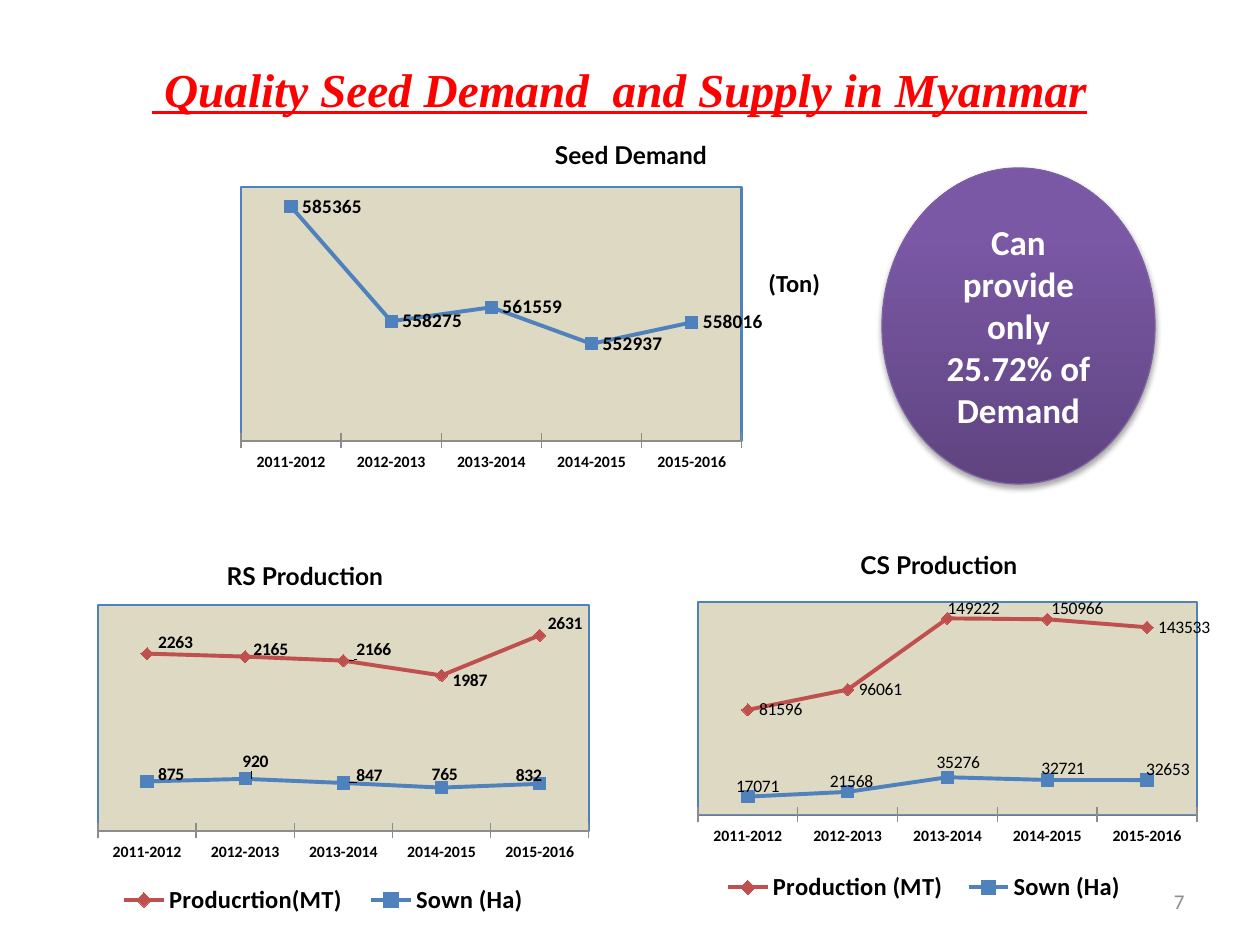
from dataclasses import dataclass

from pptx import Presentation
from pptx.chart.data import CategoryChartData
from pptx.dml.color import RGBColor
from pptx.enum.chart import XL_CHART_TYPE, XL_LABEL_POSITION, XL_LEGEND_POSITION, XL_MARKER_STYLE, XL_TICK_MARK
from pptx.enum.shapes import MSO_SHAPE
from pptx.enum.text import MSO_ANCHOR, PP_ALIGN
from pptx.oxml import parse_xml
from pptx.util import Emu, Pt

LEFT, CENTER, RIGHT = PP_ALIGN.LEFT, PP_ALIGN.CENTER, PP_ALIGN.RIGHT
TOP, MIDDLE, BOTTOM = MSO_ANCHOR.TOP, MSO_ANCHOR.MIDDLE, MSO_ANCHOR.BOTTOM
LINE, STACKED = XL_CHART_TYPE.LINE_MARKERS, XL_CHART_TYPE.LINE_MARKERS_STACKED
MARKERS = (XL_MARKER_STYLE.SQUARE, XL_MARKER_STYLE.DIAMOND)
LABEL_RIGHT = XL_LABEL_POSITION.RIGHT
LEGEND_RIGHT = XL_LEGEND_POSITION.RIGHT
TICK_CROSS = XL_TICK_MARK.CROSS
OVAL = MSO_SHAPE.OVAL
EMU_PER_PX = 914400 / 126
CHART_NS = 'xmlns:c="http://schemas.openxmlformats.org/drawingml/2006/chart"'
DRAWING_NS = 'xmlns:a="http://schemas.openxmlformats.org/drawingml/2006/main"'
YEARS = [f"{year}-{year + 1}" for year in range(2011, 2016)]


@dataclass(frozen=True)
class Theme:
    """Colours, fonts and type sizes of the slide."""
    red: str = "FF0000"
    black: str = "000000"
    white: str = "FFFFFF"
    grey: str = "8C8C8C"
    plot: str = "DDD9C3"
    series: tuple = ("4F81BD", "C0504D")
    oval_stops: tuple = ((0, "5F4480"), (80, "7B58A6"), (100, "7C57A8"))
    oval_line: str = "7D60A0"
    body_font: str = "Calibri"
    title_font: str = "Times New Roman"
    caption_font: str = "Lato"
    title: int = 27
    callout: int = 20
    heading: int = 14
    number: int = 12
    strong_label: int = 11
    label: int = 10
    axis: int = 9


def px(length):
    """Turn pixels into EMU."""
    return Emu(round(length * EMU_PER_PX))


def box(left, top, width, height):
    """Turn a pixel rectangle into EMU."""
    return [px(length) for length in (left, top, width, height)]


def set_font(font, size, color, name, bold=False):
    """Set the given font's look."""
    font.size, font.name, font.bold = Pt(size), name, bold
    font.color.rgb = RGBColor.from_string(color)


def set_layout(element, index, values, chart_size, target=""):
    """Place a chart part by a pixel rectangle or a pixel offset."""
    for old in element.xpath("./c:layout"):
        element.remove(old)
    parts = [f'<c:layoutTarget val="{target}"/>'] if target else []
    if len(values) == 4:
        parts += ['<c:xMode val="edge"/>', '<c:yMode val="edge"/>']
    for key, value, whole in zip("xywh", values, chart_size * 2):
        parts.append(f'<c:{key} val="{value / whole:.4f}"/>')
    element.insert(index, parse_xml(
        f'<c:layout {CHART_NS}><c:manualLayout>{"".join(parts)}</c:manualLayout></c:layout>'))


class SlideBuilder:
    """Adds styled elements to one slide."""

    def __init__(self, slide, theme):
        self.slide, self.theme = slide, theme

    def add_run(self, frame, text, size, color, font_name, align=LEFT, anchor=TOP, bold=True):
        """Add one styled run to the frame's paragraph and return it."""
        frame.word_wrap, frame.vertical_anchor = True, anchor
        paragraph = frame.paragraphs[0]
        paragraph.alignment = align
        run = paragraph.add_run()
        run.text = text
        set_font(run.font, size, color, font_name, bold)
        return run

    def title(self, text, rectangle):
        """Fill the title placeholder."""
        shape = self.slide.shapes.title
        shape.left, shape.top, shape.width, shape.height = box(*rectangle)
        run = self.add_run(shape.text_frame, text, self.theme.title, self.theme.red,
                           self.theme.title_font, CENTER, MIDDLE)
        run.font.italic = run.font.underline = True

    def text(self, text, rectangle, size, color, **style):
        """Add a text box."""
        shape = self.slide.shapes.add_textbox(*box(*rectangle))
        self.add_run(shape.text_frame, text, size, color, self.theme.body_font, **style)

    def caption(self, text, rectangle):
        """Add a one-cell table as a chart heading."""
        table = self.slide.shapes.add_table(1, 1, *box(*rectangle)).table
        table.first_row = table.horz_banding = False
        cell = table.cell(0, 0)
        cell.fill.background()
        cell.margin_left = cell.margin_right = cell.margin_top = cell.margin_bottom = 0
        cell.vertical_anchor = BOTTOM
        paragraph = cell.text_frame.paragraphs[0]
        paragraph.alignment = CENTER
        run = paragraph.add_run()
        run.text = text
        set_font(run.font, self.theme.heading, self.theme.black, self.theme.caption_font, True)

    def callout(self, text, rectangle):
        """Add the shaded oval."""
        shape = self.slide.shapes.add_shape(OVAL, *box(*rectangle))
        stops = "".join(f'<a:gs pos="{position * 1000}"><a:srgbClr val="{color}"/></a:gs>'
                        for position, color in self.theme.oval_stops)
        properties = shape._element.spPr
        properties.insert(2, parse_xml(
            f'<a:gradFill {DRAWING_NS}><a:gsLst>{stops}</a:gsLst>'
            '<a:lin ang="16200000" scaled="0"/></a:gradFill>'))
        shape.line.color.rgb = RGBColor.from_string(self.theme.oval_line)
        shape.line.width = Pt(0.75)
        shape.shadow.inherit = False
        properties.xpath("./a:effectLst")[0].append(parse_xml(
            f'<a:outerShdw {DRAWING_NS} blurRad="40000" dist="23000" dir="5400000" rotWithShape="0">'
            f'<a:srgbClr val="{self.theme.black}"><a:alpha val="35000"/></a:srgbClr></a:outerShdw>'))
        self.add_run(shape.text_frame, text, self.theme.callout, self.theme.white,
                     self.theme.body_font, CENTER, MIDDLE)

    def chart(self, kind, rectangle, plot, scale, series, legend=None, bold=False,
              label_size=None, offsets=()):
        """Add a line chart; scale holds minimum, maximum and major unit."""
        theme, size = self.theme, rectangle[2:]
        data = CategoryChartData(number_format="0")
        data.categories = YEARS
        for name, values in series.items():
            data.add_series(name, values)
        chart = self.slide.shapes.add_chart(kind, *box(*rectangle), data).chart
        set_font(chart.font, theme.label, theme.black, theme.body_font, bold)
        chart.has_title = False
        chart.has_legend = legend is not None
        if legend:
            chart.legend.position = LEGEND_RIGHT
            chart.legend.include_in_layout = False
            set_font(chart.legend.font, theme.heading, theme.black, theme.body_font, True)
            set_layout(chart.legend._element, 1, legend, size)
        axis = chart.category_axis
        axis.major_tick_mark = TICK_CROSS
        axis.format.line.color.rgb = RGBColor.from_string(theme.grey)
        set_font(axis.tick_labels.font, theme.axis, theme.black, theme.body_font, True)
        axis = chart.value_axis
        axis.visible = axis.has_major_gridlines = False
        axis.minimum_scale, axis.maximum_scale, axis.major_unit = scale
        area = chart._chartSpace.xpath(".//c:plotArea")[0]
        set_layout(area, 0, plot, size, "inner")
        area.append(parse_xml(
            f'<c:spPr {CHART_NS} {DRAWING_NS}><a:solidFill><a:srgbClr val="{theme.plot}"/></a:solidFill>'
            f'<a:ln w="19050"><a:solidFill><a:srgbClr val="{theme.series[0]}"/></a:solidFill></a:ln></c:spPr>'))
        chart.plots[0].vary_by_categories = False
        for index, line in enumerate(chart.plots[0].series):
            color = RGBColor.from_string(theme.series[index])
            line.smooth = False
            line.format.line.color.rgb = color
            line.format.line.width = Pt(2.25)
            line.marker.style, line.marker.size = MARKERS[index], 7
            line.marker.format.fill.solid()
            line.marker.format.fill.fore_color.rgb = color
            line.marker.format.line.color.rgb = color
            labels = line.data_labels
            labels.show_value, labels.position = True, LABEL_RIGHT
            set_font(labels.font, label_size or theme.label, theme.black, theme.body_font,
                     bold or label_size is not None)
            for point, offset in (offsets[index] if offsets else {}).items():
                line.points[point].data_label.position = LABEL_RIGHT
                element = labels._element.xpath(f"./c:dLbl[c:idx/@val={point}]")[0]
                set_layout(element, 1, offset, size)


def main():
    """Build and save the slide."""
    presentation = Presentation()
    presentation.slide_width, presentation.slide_height = px(1260), px(945)
    theme = Theme()
    builder = SlideBuilder(presentation.slides.add_slide(presentation.slide_layouts[5]), theme)
    builder.title(" Quality Seed Demand  and Supply in Myanmar", (63, 53, 1113, 71))
    builder.caption("RS Production", (136, 557, 338, 34))
    builder.caption("CS Production", (788, 546, 302, 34))
    builder.chart(
        STACKED, (32, 588, 588, 336), (66, 17, 491, 226), (0, 4000, 500),
        {"Sown (Ha)": (875, 920, 847, 765, 832), "Producrtion(MT)": (2263, 2165, 2166, 1987, 2631)},
        legend=(71, 292, 441, 40), bold=True,
        offsets=(dict(enumerate([(0, -7), (-14, -17), (2, -8), (-21, -13), (-35, -8)])),
                 dict(enumerate([(0, -11), (-3, -7), (2, -11), (0, 5), (-3, -12)]))))
    builder.chart(
        STACKED, (609, 588, 630, 357), (89, 14, 499, 213), (0, 200000, 20000),
        {"Sown (Ha)": (17071, 21568, 35276, 32721, 32653),
         "Production (MT)": (81596, 96061, 149222, 150966, 143533)},
        legend=(101, 278, 428, 43),
        offsets=(dict(enumerate([(-23, -10), (-29, -10), (-22, -15), (-17, -11), (-12, -11)])),
                 {2: (-11, -10), 3: (-7, -11)}))
    builder.text("7", (903, 876, 294, 50), theme.number, theme.grey, align=RIGHT, anchor=MIDDLE, bold=False)
    builder.caption("Seed Demand", (462, 136, 338, 34))
    builder.chart(
        LINE, (158, 168, 630, 378), (83, 19, 501, 254), (530000, 590000, 30000),
        {"Series 1": (585365, 558275, 561559, 552937, 558016)}, label_size=theme.strong_label)
    builder.text("(Ton)", (756, 262, 95, 43), theme.heading, theme.black)
    builder.callout("Can provide only 25.72% of Demand", (882, 168, 273, 316))
    presentation.save("out.pptx")


if __name__ == "__main__":
    main()
